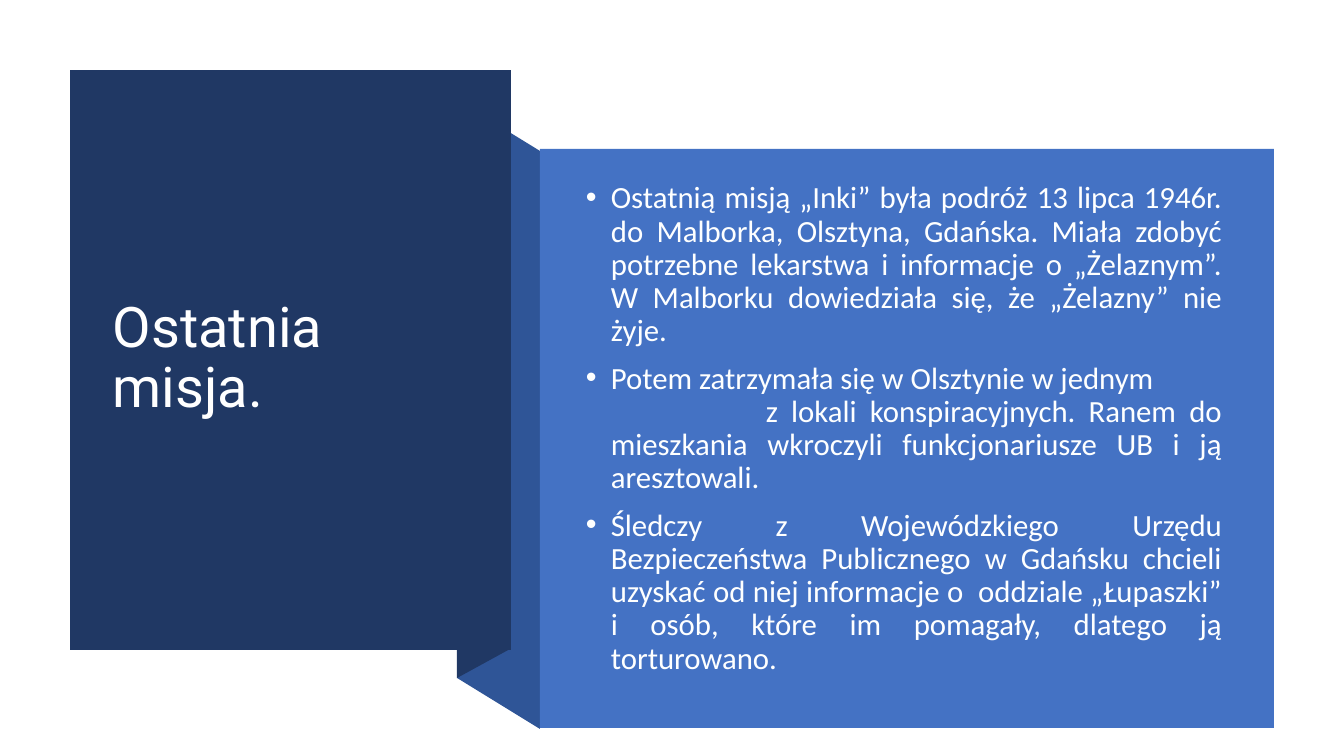
"""Build the slide about the last mission: a folded ribbon with a title and a text panel."""
from lxml.etree import SubElement
from pptx import Presentation
from pptx.dml.color import RGBColor
from pptx.enum.shapes import MSO_SHAPE
from pptx.enum.text import MSO_ANCHOR, PP_ALIGN
from pptx.oxml.ns import qn
from pptx.util import Pt

SLIDE_W, SLIDE_H = 1344, 756
PX = 12192000 / SLIDE_W

NAVY = RGBColor(0x20, 0x38, 0x64)
FOLD_BLUE = RGBColor(0x2F, 0x55, 0x97)
PANEL_BLUE = RGBColor(0x44, 0x72, 0xC4)
WHITE = RGBColor(0xFF, 0xFF, 0xFF)
SOFT_WHITE = RGBColor(0xFE, 0xFF, 0xFF)

FOLDS = [
    (FOLD_BLUE, [(540, 729), (457, 678), (457, 100), (540, 151)]),
    (NAVY, [(510, 649), (457, 678), (457, 99), (510, 70)]),
]
TITLE_CARD = (70, 70, 441, 580)
TITLE_BOX = (103, 108, 374, 503)
PANEL = (540, 149, 734, 579)
STORY_BOX = (576, 190, 656, 478)

TITLE = "Ostatnia misja."
HANG = 25
CARRY_ON = 155
STORY = [
    ("Ostatnią misją „Inki” była podróż 13 lipca 1946r. do Malborka, Olsztyna, Gdańska. "
     "Miała zdobyć potrzebne lekarstwa i informacje o „Żelaznym”. "
     "W Malborku dowiedziała się, że „Żelazny” nie żyje.", True),
    ("Potem zatrzymała się w Olsztynie w jednym", True),
    ("z lokali konspiracyjnych. Ranem do mieszkania wkroczyli funkcjonariusze UB "
     "i ją aresztowali.", False),
    ("Śledczy z Wojewódzkiego Urzędu Bezpieczeństwa Publicznego w Gdańsku chcieli "
     "uzyskać od niej informacje o  oddziale „Łupaszki” i osób, które im pomagały, "
     "dlatego ją torturowano.", True),
]


def emu(*lengths):
    return [round(length * PX) for length in lengths]


def paint(shape, color):
    shape.shadow.inherit = False
    shape.fill.solid()
    shape.fill.fore_color.rgb = color
    shape.line.fill.background()


def add_fold(slide, color, corners):
    builder = slide.shapes.build_freeform(*corners[0], scale=PX)
    builder.add_line_segments(corners[1:], close=True)
    paint(builder.convert_to_shape(), color)


def add_card(slide, box, color):
    paint(slide.shapes.add_shape(MSO_SHAPE.RECTANGLE, *emu(*box)), color)


def set_indent(paragraph, bulleted):
    properties = paragraph._p.get_or_add_pPr()
    margin, first_line = emu(HANG, -HANG if bulleted else CARRY_ON)
    properties.set("marL", str(margin))
    properties.set("indent", str(first_line))
    if bulleted:
        SubElement(properties, qn("a:buFont"), typeface="Arial")
        SubElement(properties, qn("a:buChar"), char="•")
    else:
        SubElement(properties, qn("a:buNone"))


def add_text(slide, box, lines, *, font, size, color, align=PP_ALIGN.LEFT, before=0, listed=False):
    frame = slide.shapes.add_textbox(*emu(*box)).text_frame
    frame.word_wrap = True
    frame.vertical_anchor = MSO_ANCHOR.MIDDLE
    for index, (words, starts_item) in enumerate(lines):
        paragraph = frame.add_paragraph() if index else frame.paragraphs[0]
        paragraph.alignment = align
        paragraph.line_spacing = 0.9
        paragraph.space_before = Pt(before if starts_item else 0)
        if listed:
            set_indent(paragraph, starts_item)
        run = paragraph.add_run()
        run.text = words
        run.font.name = font
        run.font.size = Pt(size)
        run.font.color.rgb = color


def main():
    deck = Presentation()
    deck.slide_width, deck.slide_height = emu(SLIDE_W, SLIDE_H)
    slide = deck.slides.add_slide(deck.slide_layouts[6])
    for color, corners in FOLDS:
        add_fold(slide, color, corners)
    add_card(slide, TITLE_CARD, NAVY)
    add_text(slide, TITLE_BOX, [(TITLE, True)], font="Roboto", size=40, color=WHITE)
    add_card(slide, PANEL, PANEL_BLUE)
    add_text(slide, STORY_BOX, STORY, font="Calibri", size=22, color=SOFT_WHITE,
             align=PP_ALIGN.JUSTIFY, before=10, listed=True)
    deck.save("out.pptx")


if __name__ == "__main__":
    main()
